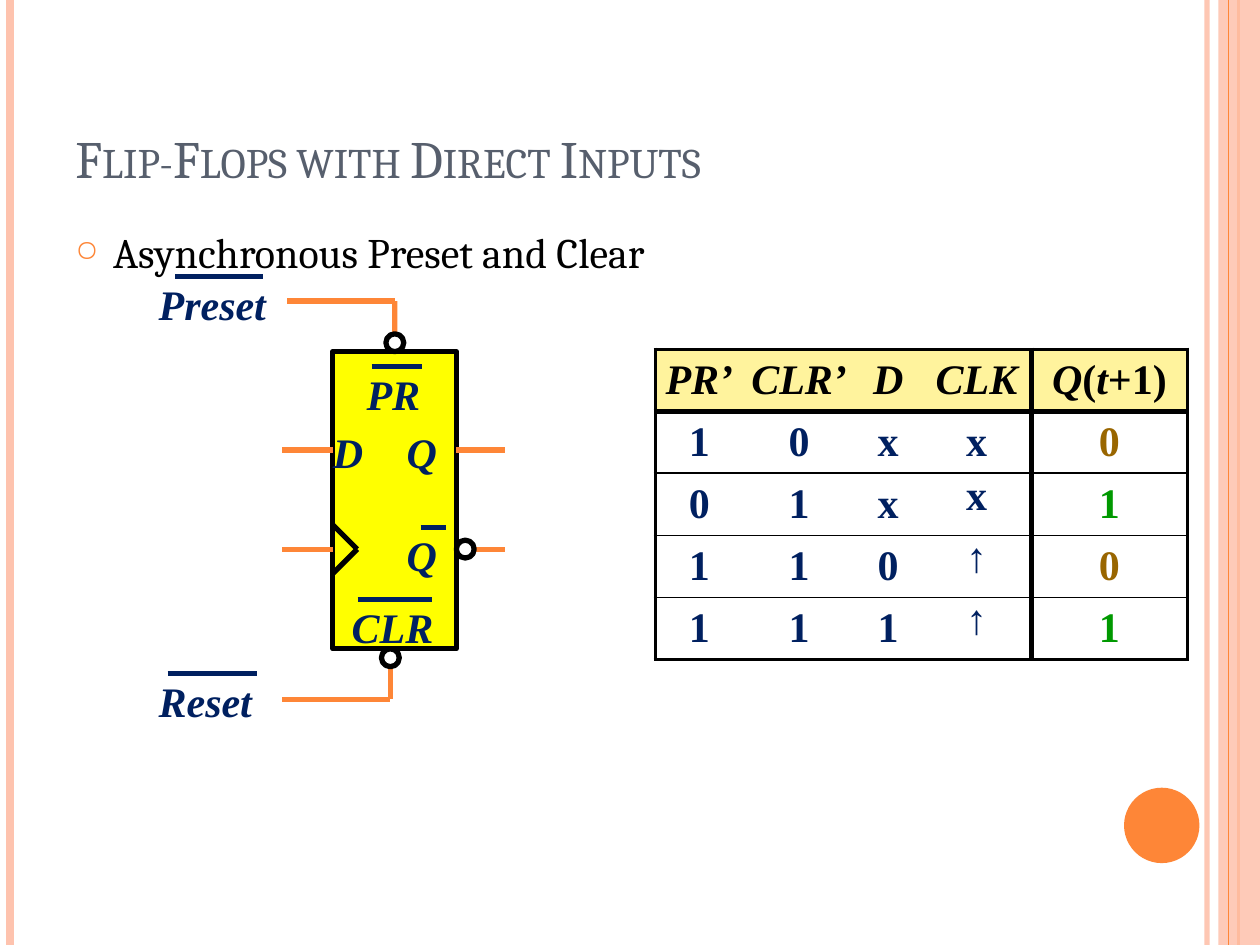
from lxml import etree
from pptx import Presentation
from pptx.dml.color import RGBColor
from pptx.enum.shapes import MSO_CONNECTOR, MSO_SHAPE
from pptx.enum.text import MSO_ANCHOR, PP_ALIGN
from pptx.oxml.ns import qn
from pptx.util import Cm, Pt

STRAIGHT = MSO_CONNECTOR.STRAIGHT
RECTANGLE, OVAL = MSO_SHAPE.RECTANGLE, MSO_SHAPE.OVAL
TOP, MIDDLE, BOTTOM = MSO_ANCHOR.TOP, MSO_ANCHOR.MIDDLE, MSO_ANCHOR.BOTTOM
LEFT, CENTER = PP_ALIGN.LEFT, PP_ALIGN.CENTER

BLACK = RGBColor(0x00, 0x00, 0x00)
WHITE = RGBColor(0xFF, 0xFF, 0xFF)
ORANGE = RGBColor(0xFE, 0x86, 0x37)
PEACH = RGBColor(0xFE, 0xC3, 0xAE)
SLATE = RGBColor(0x57, 0x5F, 0x6D)
NAVY = RGBColor(0x00, 0x20, 0x60)
YELLOW = RGBColor(0xFF, 0xFF, 0x00)
CREAM = RGBColor(0xFF, 0xF3, 0x9D)
BROWN = RGBColor(0x99, 0x66, 0x00)
GREEN = RGBColor(0x00, 0x99, 0x00)

TITLE_FONT = {"name": "Cambria", "size": Pt(30)}
BODY_FONT = {"name": "Cambria", "size": Pt(24)}
CELL_FONT = {"name": "Times New Roman", "size": Pt(24), "bold": True}
SIGNAL_FONT = {**CELL_FONT, "italic": True}
NO_MARGINS = dict.fromkeys(
    ("margin_left", "margin_top", "margin_right", "margin_bottom"), 0)

CHIP_LEFT, CHIP_TOP, CHIP_WIDTH, CHIP_HEIGHT = 6.71, 7.09, 2.49, 5.99
CHIP_RIGHT, CHIP_BOTTOM = CHIP_LEFT + CHIP_WIDTH, CHIP_TOP + CHIP_HEIGHT
WIRE_LEFT, WIRE_RIGHT = 5.69, 10.19
DATA_Y, CLOCK_Y, PRESET_Y, RESET_Y = 9.07, 11.07, 6.07, 14.1
PRESET_X, RESET_X = 7.96, 7.87
CLOCK_SIZE, BUBBLE = 0.49, 0.36

SIGNALS = [
    ("Preset", 3.2, 5.61, 2.18, (3.53, 5.31)),
    ("PR", 7.39, 7.42, 1.09, (7.49, 8.51)),
    ("D", CHIP_LEFT, 8.59, 0.99, None),
    ("Q", 8.2, 8.59, 0.99, None),
    ("Q", 8.2, 10.67, 0.99, (8.48, 8.99)),
    ("CLR", 7.09, 12.12, 1.65, (7.21, 8.71)),
    ("Reset", 3.2, 13.61, 1.9, (3.38, 5.18)),
]
HEADERS = ["PR’", "CLR’", "D", "CLK"]
RESULT_HEADER = [("Q", True), ("(", False), ("t", True), ("+1)", False)]
STATES = ["10xx0", "01xx1", "110↑0", "111↑1"]
COLUMN_WIDTHS = [1.78, 2.24, 1.35, 2.21, 3.15]
ROW_HEIGHT = 1.25


def apply(target, values):
    """Set every attribute in a dict of format values."""
    for name, value in values.items():
        setattr(target, name, value)


def set_alpha(element, percent):
    """Make the solid colour inside an element partly transparent."""
    color = next(element.iter(qn("a:srgbClr")))
    etree.SubElement(color, qn("a:alpha")).set("val", str(percent * 1000))


def add_line(page, start, end, color, points=3):
    """Draw a straight line without shadow between two points."""
    line = page.shapes.add_connector(STRAIGHT, *map(Cm, (*start, *end)))
    line.line.color.rgb = color
    line.line.width = Pt(points)
    etree.SubElement(line._element.spPr, qn("a:effectLst"))
    return line


def add_figure(page, kind, place, fill, outline=None):
    """Draw a filled preset shape, with an outline if a colour is given."""
    figure = page.shapes.add_shape(kind, *map(Cm, place))
    figure.shadow.inherit = False
    figure.fill.solid()
    figure.fill.fore_color.rgb = fill
    if outline is None:
        figure.line.fill.background()
    else:
        figure.line.color.rgb = outline
        figure.line.width = Pt(3)
    return figure


def add_span(para, text, font, color):
    """Append formatted text to a paragraph."""
    span = para.add_run()
    span.text = text
    apply(span.font, font)
    span.font.color.rgb = color
    return span


def add_text(page, place, text, font, color, frame_format):
    """Add a text box with one paragraph and return the paragraph and span."""
    frame = page.shapes.add_textbox(*map(Cm, place)).text_frame
    apply(frame, {"word_wrap": True, **frame_format})
    para = frame.paragraphs[0]
    para.alignment = LEFT
    return para, add_span(para, text, font, color)


def add_bullet(para):
    """Give a paragraph an orange ring bullet with a hanging indent."""
    props = para._p.get_or_add_pPr()
    props.set("marL", str(Cm(0.76)))
    props.set("indent", str(-Cm(0.76)))
    color = etree.SubElement(props, qn("a:buClr"))
    etree.SubElement(color, qn("a:srgbClr")).set("val", str(ORANGE))
    etree.SubElement(props, qn("a:buSzPct")).set("val", "70000")
    etree.SubElement(props, qn("a:buChar")).set("char", "○")


def set_borders(cell, widths):
    """Rule the cell sides in black; a width of zero hides the side."""
    props = cell._tc.get_or_add_tcPr()
    for index, (side, points) in enumerate(zip("LRTB", widths)):
        border = etree.Element(qn(f"a:ln{side}"), w=str(Pt(points)))
        if points:
            fill = etree.SubElement(border, qn("a:solidFill"))
            etree.SubElement(fill, qn("a:srgbClr")).set("val", str(BLACK))
        else:
            etree.SubElement(border, qn("a:noFill"))
        props.insert(index, border)


def add_frame(page):
    """Draw the side rails and the round ornament."""
    rail = add_line(page, (24.33, 0), (24.33, 19.05), PEACH)
    set_alpha(rail._element.spPr, 93)
    add_line(page, (0.2, 0), (0.2, 19.05), PEACH, 4.5)
    add_line(page, (24.97, 0), (24.97, 19.05), ORANGE, 1.5)
    band = add_figure(page, RECTANGLE, (24.56, 0, 0.84, 19.05), PEACH)
    set_alpha(band._element.spPr, 87)
    add_line(page, (24.77, 0), (24.77, 19.05), ORANGE, 0.75)
    add_figure(page, OVAL, (22.66, 15.88, 1.52, 1.52), ORANGE)


def add_headings(page):
    """Write the title and the bulleted topic."""
    title = add_text(page, (1.27, 0.76, 21.39, 3.18), "Flip-Flops with Direct Inputs",
                     TITLE_FONT, SLATE, {"vertical_anchor": BOTTOM})[1]
    title.font._element.set("cap", "small")
    topic = add_text(page, (1.27, 4.45, 21.39, 13.54), "Asynchronous Preset and Clear",
                     BODY_FONT, BLACK, {"vertical_anchor": TOP})[0]
    topic.space_before = Pt(6)
    add_bullet(topic)


def add_flip_flop(page):
    """Draw the chip with its wires, clock mark, bubbles and signal names."""
    chip = add_figure(page, RECTANGLE, (CHIP_LEFT, CHIP_TOP, CHIP_WIDTH, CHIP_HEIGHT),
                      YELLOW, BLACK)
    preset = add_line(page, (PRESET_X, PRESET_Y), (PRESET_X, CHIP_TOP), ORANGE)
    preset.end_connect(chip, 0)
    add_line(page, (5.79, PRESET_Y), (PRESET_X, PRESET_Y), ORANGE)
    add_line(page, (RESET_X, CHIP_BOTTOM), (RESET_X, RESET_Y), ORANGE)
    add_line(page, (WIRE_LEFT, RESET_Y), (RESET_X, RESET_Y), ORANGE)
    for y in (DATA_Y, CLOCK_Y):
        add_line(page, (WIRE_LEFT, y), (CHIP_LEFT, y), ORANGE)
        add_line(page, (CHIP_RIGHT, y), (WIRE_RIGHT, y), ORANGE)
    for offset in (-CLOCK_SIZE, CLOCK_SIZE):
        add_line(page, (CHIP_LEFT, CLOCK_Y + offset), (CHIP_LEFT + CLOCK_SIZE, CLOCK_Y), BLACK)
    for x, y in ((PRESET_X, CHIP_TOP - BUBBLE / 2), (RESET_X, CHIP_BOTTOM + BUBBLE / 2),
                 (CHIP_RIGHT + BUBBLE / 2, CLOCK_Y)):
        add_figure(page, OVAL, (x - BUBBLE / 2, y - BUBBLE / 2, BUBBLE, BUBBLE), WHITE, BLACK)
    for name, left, top, width, bar in SIGNALS:
        add_text(page, (left, top, width, 1.02), name, SIGNAL_FONT, NAVY,
                 {**NO_MARGINS, "word_wrap": False})
        if bar:
            add_line(page, (bar[0], top - 0.03), (bar[1], top - 0.03), NAVY)


def add_truth_table(page):
    """Build the table of next states."""
    rows, columns = len(STATES) + 1, len(COLUMN_WIDTHS)
    last = columns - 1
    table = page.shapes.add_table(rows, columns, Cm(13.21), Cm(7.04), Cm(sum(COLUMN_WIDTHS)),
                                  Cm(ROW_HEIGHT * rows)).table
    apply(table, {"first_row": False, "horz_banding": False})
    for column, width in zip(table.columns, COLUMN_WIDTHS):
        column.width = Cm(width)
    header = [[(name, True)] for name in HEADERS] + [RESULT_HEADER]
    content = [header] + [[[(mark, False)] for mark in state] for state in STATES]
    rules = [2.25, 3] + [1] * (rows - 2) + [2.25]
    uprights = [2.25] + [0] * (last - 1) + [3, 2.25]
    for r, row in enumerate(table.rows):
        row.height = Cm(ROW_HEIGHT)
        for c, cell in enumerate(row.cells):
            raised = r > 1 and c == last - 1
            apply(cell, {**NO_MARGINS, "vertical_anchor": TOP if raised else MIDDLE})
            color = BLACK if r == 0 else NAVY
            if r and c == last:
                color = GREEN if STATES[r - 1][c] == "1" else BROWN
            para = cell.text_frame.paragraphs[0]
            para.alignment = CENTER
            for text, italic in content[r][c]:
                add_span(para, text, {**CELL_FONT, "italic": italic}, color)
            if r == 0:
                cell.fill.solid()
                cell.fill.fore_color.rgb = CREAM
            else:
                cell.fill.background()
            set_borders(cell, (uprights[c], uprights[c + 1], rules[r], rules[r + 1]))


def main():
    """Create the slide and save the deck."""
    deck = Presentation()
    apply(deck, {"slide_width": Cm(25.4), "slide_height": Cm(19.05)})
    page = deck.slides.add_slide(deck.slide_layouts[6])
    add_frame(page)
    add_headings(page)
    add_truth_table(page)
    add_flip_flop(page)
    deck.save("out.pptx")


if __name__ == "__main__":
    main()
